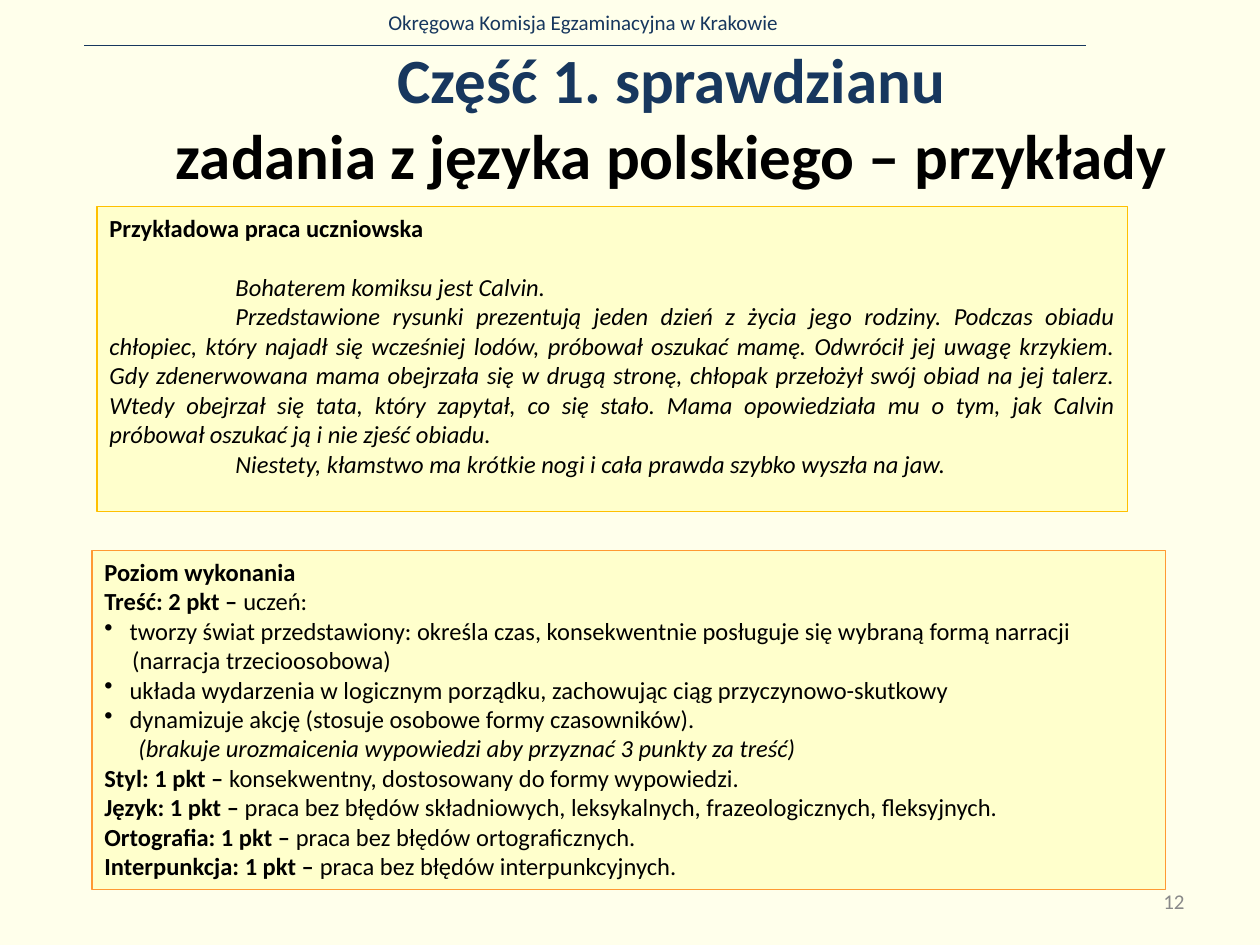
from dataclasses import dataclass

import lxml.etree
import pptx
import pptx.dml.color
import pptx.enum.shapes
import pptx.enum.text
import pptx.oxml.ns
import pptx.shapes.base
import pptx.slide
import pptx.text.text
import pptx.util

ALIGN = pptx.enum.text.PP_ALIGN
ANCHOR = pptx.enum.text.MSO_ANCHOR
CELL = pptx.util.Inches(0.1)
COLUMNS, ROWS = 100, 75
NAVY, BLACK, GRAY = "17375E", "000000", "898989"
PAGE, PANEL = "FFFFEB", "FFFFCC"


@dataclass(frozen=True)
class Area:
    column: float
    row: float
    columns: float
    rows: float


@dataclass(frozen=True)
class Span:
    text: str
    bold: bool = False
    italic: bool = False
    color: str = BLACK


@dataclass(frozen=True)
class Line:
    spans: tuple[Span, ...]
    align: ALIGN = ALIGN.LEFT
    margin: float = 0
    indent: float = 0
    bullet: bool = False
    before: float = 0


@dataclass(frozen=True)
class Panel:
    area: Area
    border: str
    lines: tuple[Line, ...]


def cells(count: float) -> int:
    return round(count * CELL)


def box(area: Area) -> tuple[int, ...]:
    return tuple(cells(n) for n in (area.column, area.row, area.columns, area.rows))


def rgb(color: str) -> pptx.dml.color.RGBColor:
    return pptx.dml.color.RGBColor.from_string(color)


def write_line(paragraph: pptx.text.text._Paragraph, line: Line, size: float) -> None:
    paragraph.alignment = line.align
    properties = paragraph._p.get_or_add_pPr()
    properties.set("marL", str(cells(line.margin)))
    properties.set("indent", str(cells(line.indent)))
    if line.bullet:
        mark = lxml.etree.SubElement(properties, pptx.oxml.ns.qn("a:buChar"))
        mark.set("char", "•")
    if line.before:
        paragraph.space_before = pptx.util.Pt(line.before)
    for span in line.spans:
        run = paragraph.add_run()
        run.text = span.text
        run.font.name = "Calibri"
        run.font.size = pptx.util.Pt(size)
        run.font.bold = span.bold
        run.font.italic = span.italic
        run.font.color.rgb = rgb(span.color)


def write(shape: pptx.shapes.base.BaseShape, lines: tuple[Line, ...], size: float, anchor: ANCHOR) -> None:
    frame = shape.text_frame
    frame.word_wrap = True
    frame.vertical_anchor = anchor
    for index, line in enumerate(lines):
        paragraph = frame.add_paragraph() if index else frame.paragraphs[0]
        write_line(paragraph, line, size)


def draw_text(slide: pptx.slide.Slide, area: Area, lines: tuple[Line, ...], size: float, anchor: ANCHOR = ANCHOR.TOP) -> None:
    write(slide.shapes.add_textbox(*box(area)), lines, size, anchor)


def draw_panel(slide: pptx.slide.Slide, panel: Panel) -> None:
    shape = slide.shapes.add_shape(pptx.enum.shapes.MSO_SHAPE.RECTANGLE, *box(panel.area))
    shape.shadow.inherit = False
    shape.fill.solid()
    shape.fill.fore_color.rgb = rgb(PANEL)
    shape.line.color.rgb = rgb(panel.border)
    shape.line.width = pptx.util.Pt(0.75)
    write(shape, panel.lines, 14, ANCHOR.TOP)


def draw_rule(slide: pptx.slide.Slide, start: float, end: float, row: float) -> None:
    rule = slide.shapes.add_connector(
        pptx.enum.shapes.MSO_CONNECTOR.STRAIGHT, cells(start), cells(row), cells(end), cells(row)
    )
    rule.line.color.rgb = rgb(NAVY)
    rule.line.width = pptx.util.Pt(0.5)
    lxml.etree.SubElement(rule._element.spPr, pptx.oxml.ns.qn("a:effectLst"))


def story(text: str, before: float = 0) -> Line:
    return Line((Span(text, italic=True),), ALIGN.JUSTIFY, indent=10, before=before)


def criterion(label: str, verdict: str) -> Line:
    return Line((Span(f"{label} – ", bold=True), Span(verdict)))


def point(text: str) -> Line:
    return Line((Span(text),), margin=2, indent=-2, bullet=True)


HEADER = (Line((Span("Okręgowa Komisja Egzaminacyjna w Krakowie", color=NAVY),), ALIGN.CENTER),)
TITLE = (
    Line((Span("Część 1. sprawdzianu", bold=True, color=NAVY),), ALIGN.CENTER),
    Line((Span("zadania z języka polskiego – przykłady", bold=True),), ALIGN.CENTER),
)
PAGE_NUMBER = (Line((Span("12", color=GRAY),), ALIGN.RIGHT),)

STUDENT_WORK = Panel(Area(7.7, 16.4, 81.8, 24.2), "FFC000", (
    Line((Span("Przykładowa praca uczniowska", bold=True),), ALIGN.JUSTIFY),
    story("Bohaterem komiksu jest Calvin.", before=17),
    story(
        "Przedstawione rysunki prezentują jeden dzień z życia jego rodziny. Podczas obiadu "
        "chłopiec, który najadł się wcześniej lodów, próbował oszukać mamę. Odwrócił jej uwagę "
        "krzykiem. Gdy zdenerwowana mama obejrzała się w drugą stronę, chłopak przełożył swój "
        "obiad na jej talerz. Wtedy obejrzał się tata, który zapytał, co się stało. Mama "
        "opowiedziała mu o tym, jak Calvin próbował oszukać ją i nie zjeść obiadu."
    ),
    story("Niestety, kłamstwo ma krótkie nogi i cała prawda szybko wyszła na jaw."),
))
ASSESSMENT = Panel(Area(7.3, 43.7, 85.2, 26.9), "FF9933", (
    Line((Span("Poziom wykonania", bold=True),)),
    criterion("Treść: 2 pkt", "uczeń:"),
    point("tworzy świat przedstawiony: określa czas, konsekwentnie posługuje się wybraną formą narracji"),
    Line((Span("(narracja trzecioosobowa)"),), margin=2.2),
    point("układa wydarzenia w logicznym porządku, zachowując ciąg przyczynowo-skutkowy"),
    point("dynamizuje akcję (stosuje osobowe formy czasowników)."),
    Line((Span("(brakuje urozmaicenia wypowiedzi aby przyznać 3 punkty za treść)", italic=True),), margin=2.7),
    criterion("Styl: 1 pkt", "konsekwentny, dostosowany do formy wypowiedzi."),
    criterion("Język: 1 pkt", "praca bez błędów składniowych, leksykalnych, frazeologicznych, fleksyjnych."),
    criterion("Ortografia: 1 pkt", "praca bez błędów ortograficznych."),
    criterion("Interpunkcja: 1 pkt", "praca bez błędów interpunkcyjnych."),
))


def main() -> None:
    deck = pptx.Presentation()
    deck.slide_width, deck.slide_height = cells(COLUMNS), cells(ROWS)
    slide = deck.slides.add_slide(deck.slide_layouts[6])
    slide.background.fill.solid()
    slide.background.fill.fore_color.rgb = rgb(PAGE)
    draw_text(slide, Area(2.6, 0.3, 87.4, 3), HEADER, 12)
    draw_rule(slide, 6.7, 86.2, 3.6)
    draw_text(slide, Area(12.3, 3, 82, 12.5), TITLE, 36, ANCHOR.MIDDLE)
    draw_text(slide, Area(71.7, 69.5, 23.3, 4), PAGE_NUMBER, 12, ANCHOR.MIDDLE)
    for panel in (STUDENT_WORK, ASSESSMENT):
        draw_panel(slide, panel)
    deck.save("out.pptx")


if __name__ == "__main__":
    main()
